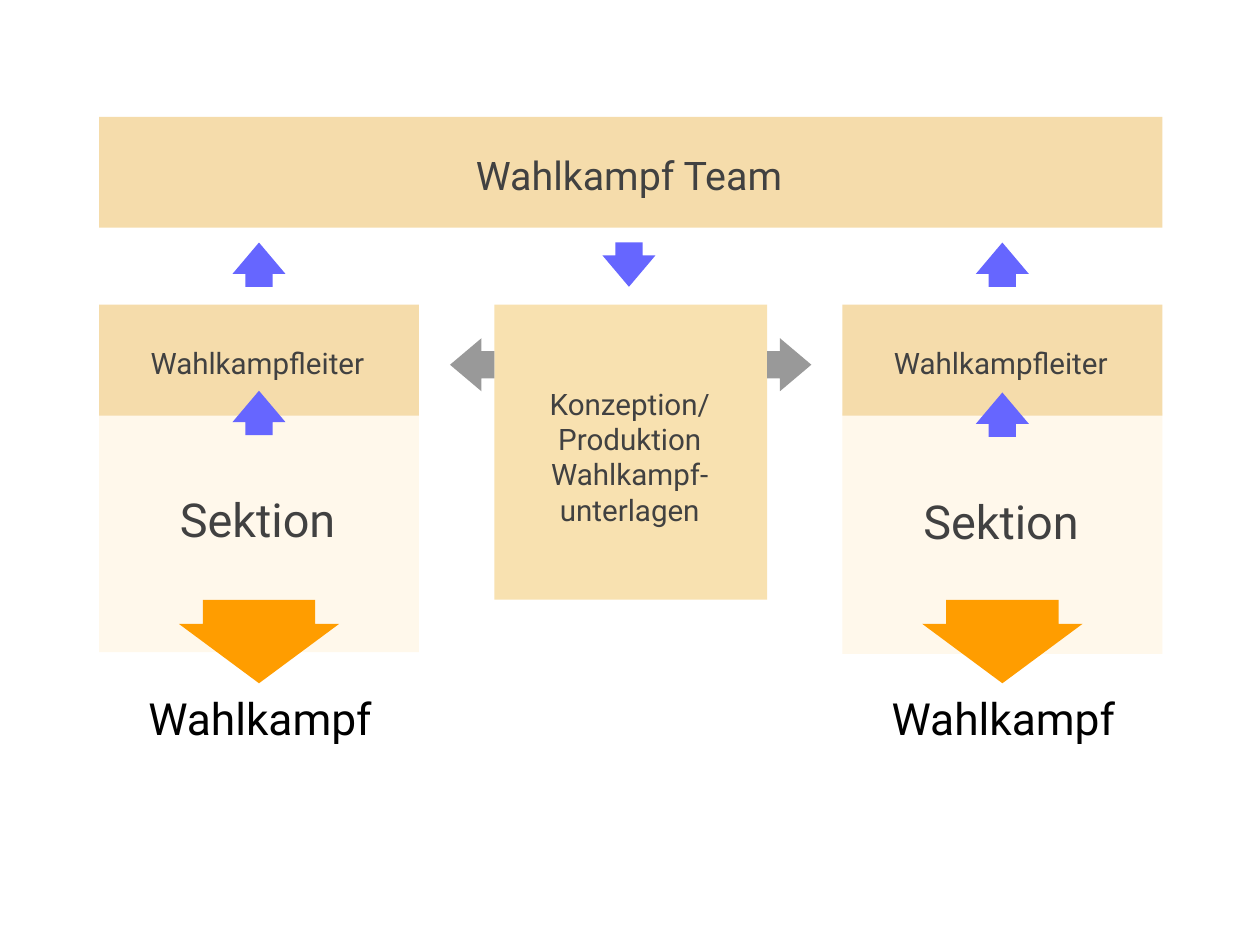
from pptx import Presentation
from pptx import util as u
from pptx.dml.color import RGBColor
from pptx.enum import shapes, text

COLORS = {
    "sand": "F5DCAB", "cream": "FFF8EB", "wheat": "F8E1B0",
    "blue": "6666FF", "orange": "FF9D00", "gray": "999999",
    "dark": "414141", "black": "000000",
}
FONT = "Roboto"
UP, DOWN, LEFT, RIGHT = 270, 90, 180, 0

# Lengths in cm
MARGIN, TEAM_WIDTH, COLUMN_WIDTH = 2.84, 30.48, 9.17
BAR_HEIGHT, SECTION_HEIGHT = 3.18, 6.91
TEAM_TOP, ROW_TOP, SECTION_TOP = 3.35, 8.74, 11.79
CONCEPT_WIDTH, CONCEPT_HEIGHT = 7.82, 8.46
UPPER_ARROW_Y, LOWER_ARROW_Y, SIDE_ARROW_Y, CAMPAIGN_ARROW_Y = 7.59, 11.84, 10.46, 18.4
SMALL_ARROW = (1.27, 1.52, 0.512, 0.708)
LARGE_ARROW = (2.39, 4.6, 0.7, 0.713)

TEAM = "Wahlkampf Team"
LEADER = "Wahlkampfleiter"
SECTION = "Sektion"
CAMPAIGN = "Wahlkampf"
CONCEPT = ["Konzeption/Produktion", "Wahlkampf-unterlagen"]
COLUMN_SHIFTS = [0, 0.05]  # the right section sits slightly lower


def cm(*values):
    return [u.Cm(value) for value in values]


def add_filled(slide, kind, box, color):
    shape = slide.shapes.add_shape(kind, *cm(*box))
    shape.shadow.inherit = False
    shape.fill.solid()
    shape.fill.fore_color.rgb = RGBColor.from_string(COLORS[color])
    shape.line.fill.background()
    return shape


def add_rectangle(slide, box, color):
    add_filled(slide, shapes.MSO_SHAPE.RECTANGLE, box, color)


def add_arrow(slide, center_x, center_y, direction, color, form=SMALL_ARROW):
    """Place a block arrow by its centre; form is length, breadth, shaft and head ratio."""
    length, breadth, shaft, head = form
    box = (center_x - length / 2, center_y - breadth / 2, length, breadth)
    arrow = add_filled(slide, shapes.MSO_SHAPE.RIGHT_ARROW, box, color)
    arrow.adjustments[0], arrow.adjustments[1] = shaft, head
    arrow.rotation = direction


def add_label(slide, box, lines, size, color="dark", wrap=True):
    frame = slide.shapes.add_textbox(*cm(*box)).text_frame
    frame.margin_left = frame.margin_right = frame.margin_top = frame.margin_bottom = 0
    frame.vertical_anchor = text.MSO_ANCHOR.MIDDLE
    frame.word_wrap = wrap
    if not wrap:
        frame.auto_size = text.MSO_AUTO_SIZE.SHAPE_TO_FIT_TEXT
    for index, line in enumerate(lines):
        paragraph = frame.add_paragraph() if index else frame.paragraphs[0]
        paragraph.alignment = text.PP_ALIGN.CENTER
        run = paragraph.add_run()
        run.text = line
        run.font.size = u.Pt(size)
        run.font.name = FONT
        run.font.color.rgb = RGBColor.from_string(COLORS[color])


def add_column(slide, left, shift):
    center = left + COLUMN_WIDTH / 2
    add_rectangle(slide, (left, SECTION_TOP + shift, COLUMN_WIDTH, SECTION_HEIGHT), "cream")
    add_label(slide, (left + 0.56, 12.85 + shift, 7.98, 4.06), [SECTION], 38)
    add_rectangle(slide, (left, ROW_TOP, COLUMN_WIDTH, BAR_HEIGHT), "sand")
    add_label(slide, (left + 0.54, 9.58, 8, 1.63), [LEADER], 24)
    add_arrow(slide, center, LOWER_ARROW_Y + shift, UP, "blue")
    add_arrow(slide, center, UPPER_ARROW_Y, UP, "blue")
    add_arrow(slide, center, CAMPAIGN_ARROW_Y, DOWN, "orange", LARGE_ARROW)
    add_label(slide, (left + 1.12, 19.69, 6.99, 1.8), [CAMPAIGN], 36, "black", wrap=False)


def add_concept(slide):
    left = MARGIN + (TEAM_WIDTH - CONCEPT_WIDTH) / 2
    add_rectangle(slide, (left, ROW_TOP, CONCEPT_WIDTH, CONCEPT_HEIGHT), "wheat")
    add_label(slide, (left + 0.66, 9.32, 6.45, 7.54), CONCEPT, 24)
    add_arrow(slide, 18.03, UPPER_ARROW_Y, DOWN, "blue")
    half_arrow = SMALL_ARROW[0] / 2
    add_arrow(slide, left - half_arrow, SIDE_ARROW_Y, LEFT, "gray")
    add_arrow(slide, left + CONCEPT_WIDTH + half_arrow, SIDE_ARROW_Y, RIGHT, "gray")


def main():
    presentation = Presentation()
    presentation.slide_width, presentation.slide_height = cm(36.12, 27.1)
    slide = presentation.slides.add_slide(presentation.slide_layouts[6])
    add_rectangle(slide, (MARGIN, TEAM_TOP, TEAM_WIDTH, BAR_HEIGHT), "sand")
    add_label(slide, (7.19, 4.19, 21.69, 1.63), [TEAM], 32)
    for index, shift in enumerate(COLUMN_SHIFTS):
        add_column(slide, MARGIN + index * (TEAM_WIDTH - COLUMN_WIDTH), shift)
    add_concept(slide)
    presentation.save("out.pptx")


if __name__ == "__main__":
    main()
